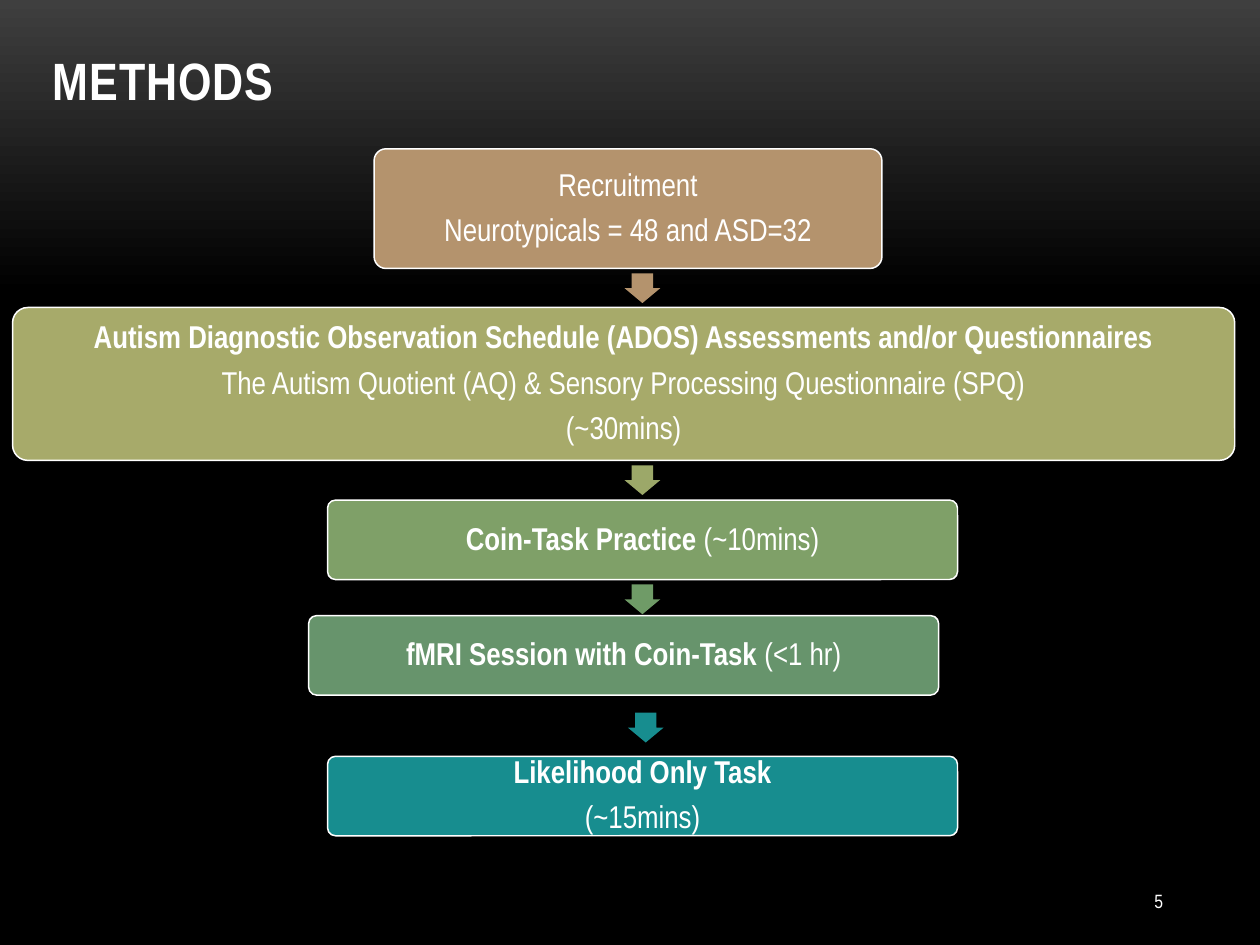
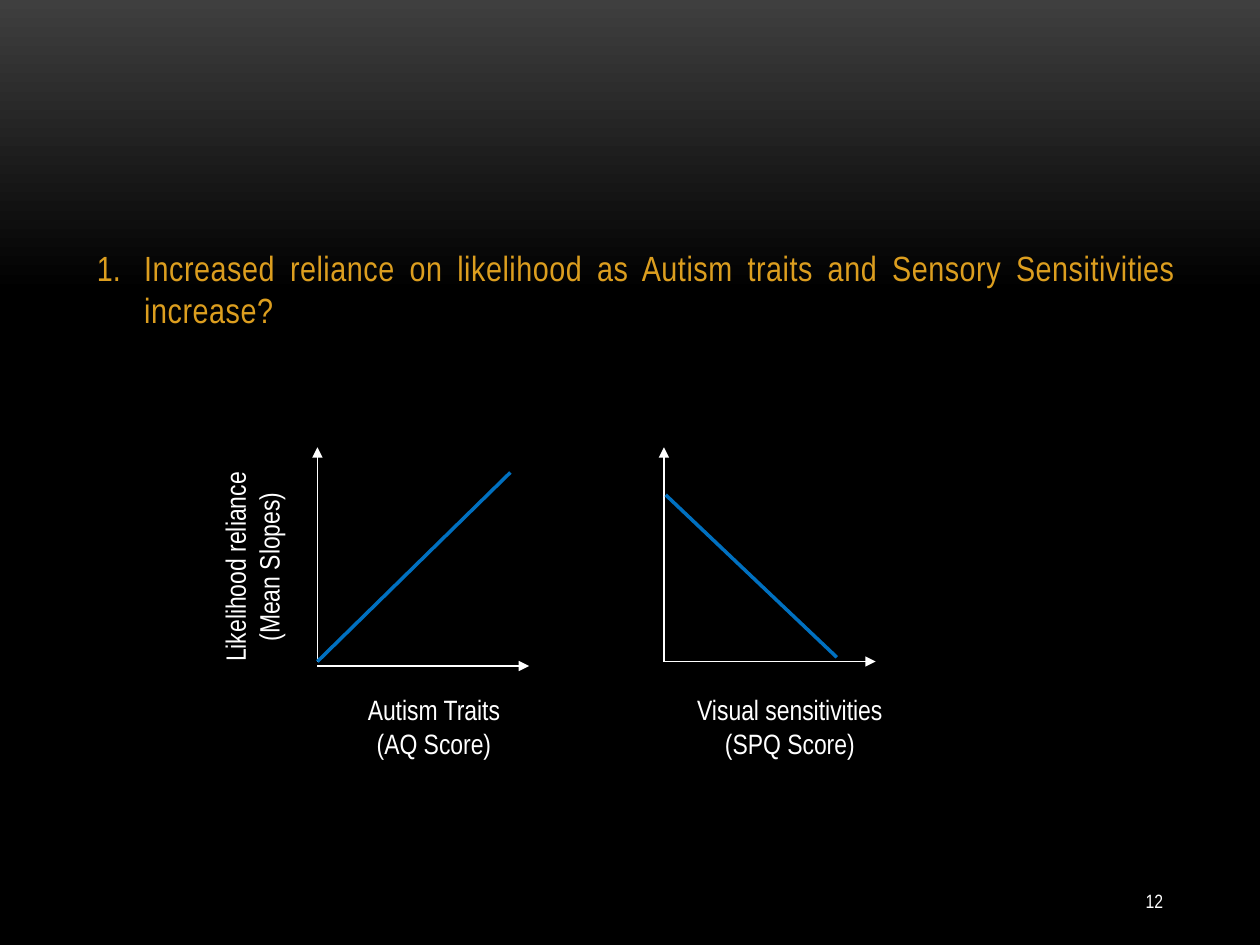
import dataclasses

import pptx
import pptx.dml.color
import pptx.enum.shapes
import pptx.enum.text
import pptx.oxml
import pptx.oxml.ns
import pptx.util

Pt = pptx.util.Pt
ALIGN = pptx.enum.text.PP_ALIGN
ANCHOR = pptx.enum.text.MSO_ANCHOR
SHAPE = pptx.enum.shapes.MSO_SHAPE
qn = pptx.oxml.ns.qn
DRAWING_NS = pptx.oxml.ns.nsdecls("a")


@dataclasses.dataclass(frozen=True)
class Theme:
    font: str = "Arial Narrow"
    text: str = "FFFFFF"
    question: str = "DC9E1F"
    trend: str = "0070C0"
    glow: str = "3F3F3F"
    night: str = "000000"
    title_size: float = 30
    question_size: float = 20
    step_size: float = 18
    label_size: float = 16
    number_size: float = 11


@dataclasses.dataclass(frozen=True)
class Box:
    left: float
    top: float
    width: float
    height: float

    def inside(self, left, top, width, height):
        """Return a box whose position is measured from this one's corner."""
        return Box(self.left + left, self.top + top, width, height)

    def lengths(self):
        return [Pt(value) for value in dataclasses.astuple(self)]


THEME = Theme()
TITLE_AND_CONTENT, TITLE_ONLY = 1, 5

# Each step: text lines of (text, bold) runs, place in the flow, fill
STEPS = [
    ([[("Recruitment", False)], [("Neurotypicals = 48 and ASD=32", False)]],
     (206.6, 0, 290.2, 68.4), "B4936D"),
    ([[("Autism Diagnostic Observation Schedule (ADOS) Assessments and/or Questionnaires", True)],
      [("The Autism Quotient (AQ) & Sensory Processing Questionnaire (SPQ)", False)],
      [("(~30mins)", False)]],
     (0, 90.7, 698.4, 87.4), "A7AA6A"),
    ([[("Coin-Task Practice ", True), ("(~10mins)", False)]],
     (180, 200.8, 360, 45.4), "7FA068"),
    ([[("fMRI Session with Coin-Task ", True), ("(<1 hr)", False)]],
     (169.2, 266.8, 360, 45.4), "67946C"),
    ([[("Likelihood Only Task", True)], [("(~15mins)", False)]],
     (180, 347.2, 360, 45.4), "178D8F"),
]
# Each arrow follows its step: centre across the flow, gap below the step, fill
ARROWS = [
    (359.9, 2.8, "B4936D"),
    (359.9, 2.8, "9CA869"),
    (359.9, 2.8, "6F9B67"),
    (361.8, 10.1, "178D8F"),
]


def rgb(value):
    return pptx.dml.color.RGBColor.from_string(value)


def write_text(frame, lines, size, color=THEME.text, align=ALIGN.CENTER,
               anchor=ANCHOR.TOP, spacing=None, after=0, tracking=0):
    """Fill a frame; each line is a string or a list of (text, bold) runs."""
    frame.word_wrap = True
    frame.auto_size = pptx.enum.text.MSO_AUTO_SIZE.NONE
    frame.vertical_anchor = anchor
    for index, line in enumerate(lines):
        paragraph = frame.add_paragraph() if index else frame.paragraphs[0]
        paragraph.alignment = align
        paragraph.space_before = Pt(0)
        paragraph.space_after = Pt(after)
        paragraph.line_spacing = spacing
        runs = [(line, False)] if isinstance(line, str) else line
        for text, bold in runs:
            run = paragraph.add_run()
            run.text = text
            run.font.name = THEME.font
            run.font.size = Pt(size)
            run.font.bold = bold
            run.font.color.rgb = rgb(color)
            if tracking:
                run.font._element.set("spc", str(round(tracking * 100)))


def number_paragraph(paragraph, indent, color):
    properties = paragraph._p.get_or_add_pPr()
    properties.set("marL", str(Pt(indent)))
    properties.set("indent", str(-Pt(indent)))
    for xml in (
        f'<a:buClr {DRAWING_NS}><a:srgbClr val="{color}"/></a:buClr>',
        f'<a:buFont {DRAWING_NS} typeface="{THEME.font}"/>',
        f'<a:buAutoNum {DRAWING_NS} type="arabicPeriod"/>',
    ):
        properties.append(pptx.oxml.parse_xml(xml))


def place(shape, box):
    shape.left, shape.top, shape.width, shape.height = box.lengths()


def add_label(shapes, box, lines, size=THEME.label_size, **text_format):
    label = shapes.add_textbox(*box.lengths())
    write_text(label.text_frame, lines, size, **text_format)
    return label


def add_block(slide, kind, box, fill):
    block = slide.shapes.add_shape(kind, *box.lengths())
    block.shadow.inherit = False
    block.fill.solid()
    block.fill.fore_color.rgb = rgb(fill)
    block.line.fill.background()
    return block


def add_line(shapes, start, end, color=THEME.text, width=1, arrow=False):
    line = shapes.add_connector(
        pptx.enum.shapes.MSO_CONNECTOR.STRAIGHT, *map(Pt, start + end))
    line.line.color.rgb = rgb(color)
    line.line.width = Pt(width)
    if arrow:
        line.line._get_or_add_ln().append(
            pptx.oxml.parse_xml(f'<a:tailEnd {DRAWING_NS} type="triangle"/>'))
    line._element.find(qn("p:spPr")).append(
        pptx.oxml.parse_xml(f"<a:effectLst {DRAWING_NS}/>"))


def set_background(master):
    fill = master.background.fill
    fill.gradient()
    fill.gradient_angle = 270
    stops = zip(fill.gradient_stops, [(0, THEME.glow), (0.31, THEME.night)])
    for stop, (position, color) in stops:
        stop.position = position
        stop.color.rgb = rgb(color)


def add_slide(deck, layout, number):
    slide = deck.slides.add_slide(deck.slide_layouts[layout])
    add_label(slide.shapes, Box(594, 500.4, 77.8, 28.8), [str(number)],
              THEME.number_size, align=ALIGN.RIGHT, anchor=ANCHOR.MIDDLE)
    return slide


def add_flow(slide, box):
    step_boxes = []
    for lines, position, fill in STEPS:
        step_box = box.inside(*position)
        step = add_block(slide, SHAPE.ROUNDED_RECTANGLE, step_box, fill)
        step.adjustments[0] = 0.1
        step.line.color.rgb = rgb(THEME.text)
        step.line.width = Pt(0.85)
        write_text(step.text_frame, lines, THEME.step_size,
                   anchor=ANCHOR.MIDDLE, spacing=0.9, after=6.5)
        step_boxes.append(step_box)

    width, height = 20.4, 17
    for (center, gap, fill), step_box in zip(ARROWS, step_boxes):
        top = step_box.top + step_box.height + gap
        arrow_box = Box(box.left + center - width / 2, top, width, height)
        arrow = add_block(slide, SHAPE.DOWN_ARROW, arrow_box, fill)
        arrow.adjustments[0] = 0.6
        arrow.adjustments[1] = 0.5


def add_graph(slide, box, caption, caption_left, caption_width, trend, axis_drop=0):
    """Draw axes along the box, a trend inside it and a caption below it."""
    shapes = slide.shapes.add_group_shape().shapes
    add_label(shapes, box.inside(caption_left, 136.8, caption_width, 46), caption)
    right, bottom = box.left + box.width, box.top + box.height
    axis_y = bottom + axis_drop
    add_line(shapes, (box.left, bottom), (box.left, box.top), arrow=True)
    add_line(shapes, (box.left, axis_y), (right, axis_y), arrow=True)
    start, end = [(box.left + x, box.top + y) for x, y in trend]
    add_line(shapes, start, end, THEME.trend, 2)


def build_methods(deck):
    slide = add_slide(deck, TITLE_ONLY, 5)
    title = slide.shapes.title
    place(title, Box(23, 24.5, 624.2, 42.5))
    write_text(title.text_frame, [[("METHODS", True)]], THEME.title_size,
               align=ALIGN.LEFT, anchor=ANCHOR.BOTTOM, tracking=0.5)
    add_flow(slide, Box(7.2, 85, 698.4, 392.6))


def build_predictions(deck):
    slide = add_slide(deck, TITLE_AND_CONTENT, 12)
    title = slide.shapes.title._element
    title.getparent().remove(title)

    question = slide.placeholders[1]
    place(question, Box(48.2, 137, 631.4, 50.4))
    number_paragraph(question.text_frame.paragraphs[0], 27, THEME.question)
    write_text(
        question.text_frame,
        ["Increased reliance on likelihood as Autism traits and Sensory Sensitivities increase?"],
        THEME.question_size, color=THEME.question, align=ALIGN.JUSTIFY,
        after=6, tracking=0.3)

    reliance = add_label(slide.shapes, Box(75.6, 301, 136.8, 46),
                         ["Likelihood reliance (Mean Slopes)"])
    reliance.rotation = 270

    autism_plot = Box(181.4, 255.6, 121, 122.4)
    sensory_plot = autism_plot.inside(198, 0, 121, 122.4)
    add_graph(slide, autism_plot, ["Autism Traits", "(AQ Score)"], 12.2, 108.8,
              [(0, 122.4), (110.2, 14.4)], axis_drop=2.6)
    add_graph(slide, sensory_plot, ["Visual sensitivities", "(SPQ Score)"], 0, 144,
              [(1, 27.2), (98.8, 120)])


def main():
    deck = pptx.Presentation()
    deck.slide_width, deck.slide_height = Pt(720), Pt(540)
    set_background(deck.slide_master)
    build_methods(deck)
    build_predictions(deck)
    deck.save("out.pptx")


if __name__ == "__main__":
    main()
